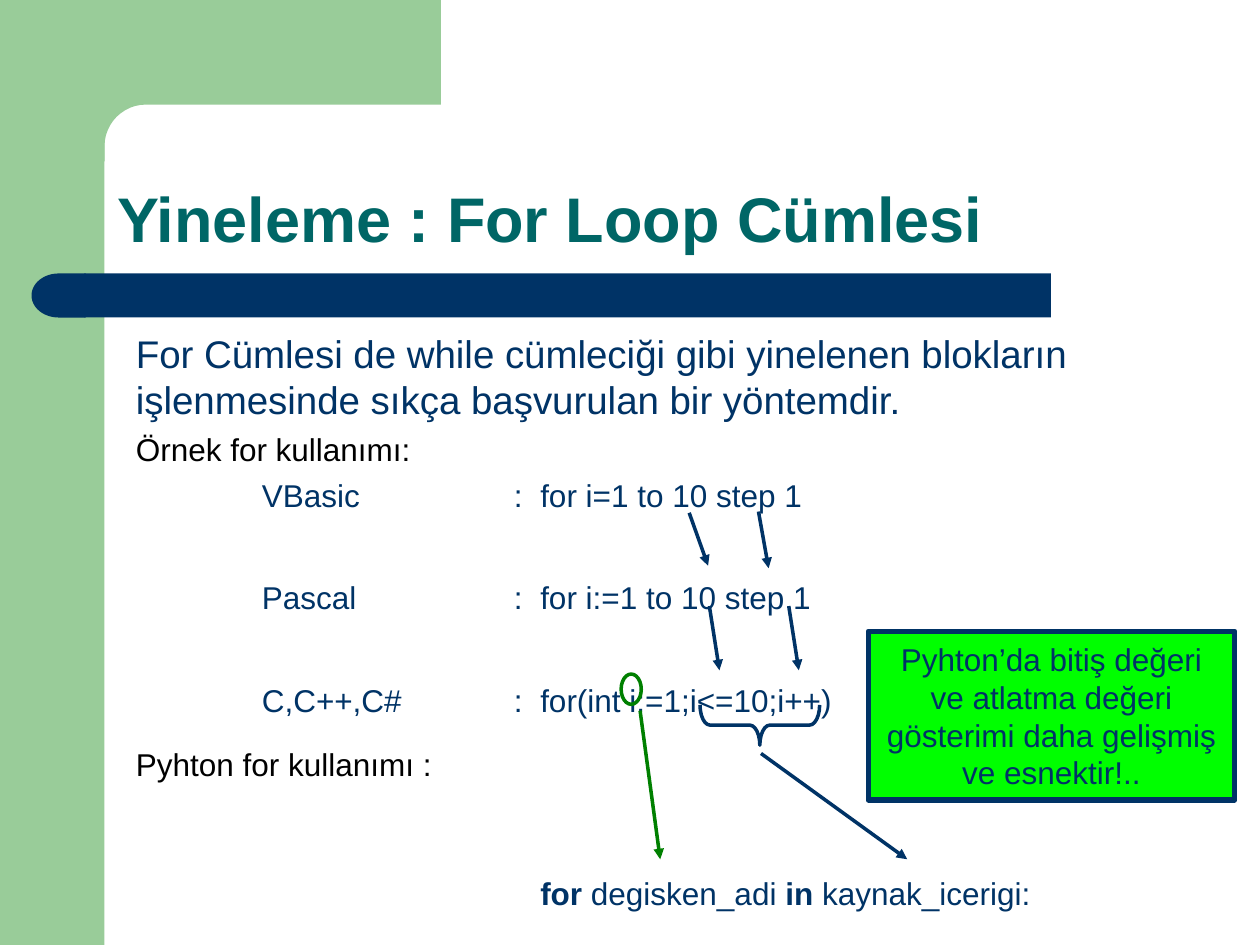
"""Build the slide that explains the for loop in several languages."""
from dataclasses import dataclass
from math import cos, pi, sin

from lxml import etree
from pptx import Presentation
from pptx.dml.color import RGBColor
from pptx.enum.shapes import MSO_CONNECTOR, MSO_SHAPE
from pptx.enum.text import MSO_ANCHOR, MSO_AUTO_SIZE, PP_ALIGN
from pptx.oxml.ns import qn
from pptx.util import Inches, Pt

COLUMNS, ROWS = 10, 7.5
WIDTH, HEIGHT = Inches(10), Inches(7.5)
TITLE_ONLY = 5
RECTANGLE, OVAL = MSO_SHAPE.RECTANGLE, MSO_SHAPE.OVAL
BRACE, ROUND_END = MSO_SHAPE.RIGHT_BRACE, MSO_SHAPE.FLOWCHART_DELAY
STRAIGHT = MSO_CONNECTOR.STRAIGHT
LEFT, CENTER = PP_ALIGN.LEFT, PP_ALIGN.CENTER
TOP, MIDDLE, BOTTOM = MSO_ANCHOR.TOP, MSO_ANCHOR.MIDDLE, MSO_ANCHOR.BOTTOM
NO_FIT = MSO_AUTO_SIZE.NONE
FONT = "Arial"
NAVY, TEAL, SAGE = "003366", "006666", "99CC99"
GREEN, LIME, BLACK = "008000", "00FF00", "000000"
CODE_STOPS = (1, 3, 3.21)


@dataclass
class Area:
    left: float
    top: float
    width: float
    height: float

    def box(self) -> tuple:
        return x(self.left), y(self.top), x(self.width), y(self.height)


@dataclass
class Outline:
    kind: int
    area: Area
    fill: str = ""
    line: str = ""
    weight: float = 2
    rotation: float = 0


@dataclass
class Arrow:
    start: tuple
    end: tuple
    color: str = NAVY


@dataclass
class Line:
    wording: tuple
    color: str = NAVY
    size: int = 18
    spacing: float = 1
    before: float = 4.5
    indent: float = 0


ARROWS = (
    Arrow((5.08, 5.64), (5.24, 6.82), GREEN),
    Arrow((6.04, 5.98), (7.2, 6.82)),
    Arrow((5.63, 4.81), (5.71, 5.32)),
    Arrow((6.26, 4.81), (6.34, 5.32)),
    Arrow((5.47, 4.07), (5.62, 4.49)),
    Arrow((6.02, 4.06), (6.1, 4.51)),
)
BODY = (
    Line(("For Cümlesi de while cümleciği gibi yinelenen blokların "
          "işlenmesinde sıkça başvurulan bir yöntemdir.",), size=22),
    Line(("Örnek for kullanımı:",), BLACK),
    Line(("\tVBasic\t:\tfor i=1 to 10 step 1",)),
    Line(("\tPascal\t:\tfor i:=1 to 10 step 1",), spacing=2.5),
    Line(("\tC,C++,C#\t:\tfor(int i:=1;i<=10;i++)",), spacing=2.5),
    Line(("Pyhton for kullanımı :",), BLACK, spacing=1.5),
    Line(("", "for", " degisken_adi ", "in", " kaynak_icerigi:"),
         spacing=1.5, before=41, indent=CODE_STOPS[-1]),
)


def x(columns: float) -> int:
    """Turn grid columns into a length."""
    return round(WIDTH * columns / COLUMNS)


def y(rows: float) -> int:
    """Turn grid rows into a length."""
    return round(HEIGHT * rows / ROWS)


def rgb(color: str) -> RGBColor:
    """Turn a hex string into a colour."""
    return RGBColor.from_string(color)


def style_font(font, size: float, color: str, bold: bool = False) -> None:
    """Give a font its name, size, colour and weight."""
    font.name, font.size, font.bold = FONT, Pt(size), bold
    font.color.rgb = rgb(color)


def paint(shape, fill: str = "", line: str = "", weight: float = 2) -> None:
    """Set fill and line of a shape and drop its shadow."""
    shape.shadow.inherit = False
    if fill:
        shape.fill.solid()
        shape.fill.fore_color.rgb = rgb(fill)
    else:
        shape.fill.background()
    if line:
        shape.line.color.rgb = rgb(line)
        shape.line.width = Pt(weight)
    else:
        shape.line.fill.background()


def draw_outline(slide, outline: Outline):
    """Draw one preset shape."""
    shape = slide.shapes.add_shape(outline.kind, *outline.area.box())
    paint(shape, outline.fill, outline.line, outline.weight)
    shape.rotation = outline.rotation
    return shape


def draw_corner(slide) -> None:
    """Draw the top band with its rounded inner corner."""
    inner, radius, steps = 0.83, 0.33, 12
    center = inner + radius
    angles = [pi / 2 * step / steps for step in range(steps + 1)]
    curve = [(x(center - radius * sin(a)), y(center - radius * cos(a)))
             for a in angles]
    builder = slide.shapes.build_freeform(x(0.5), y(0))
    builder.add_line_segments(
        [(x(3.5), y(0)), (x(3.5), y(inner)), *curve,
         (x(inner), y(1.28)), (x(0.5), y(1.28))], close=True)
    paint(builder.convert_to_shape(), SAGE)


def draw_arrow(slide, arrow: Arrow) -> None:
    """Draw a straight line with a triangle at its end."""
    (x1, y1), (x2, y2) = arrow.start, arrow.end
    connector = slide.shapes.add_connector(STRAIGHT, x(x1), y(y1), x(x2), y(y2))
    connector.line.color.rgb = rgb(arrow.color)
    connector.line.width = Pt(2)
    properties = connector._element.spPr
    etree.SubElement(properties.find(qn("a:ln")), qn("a:tailEnd"), type="triangle")
    etree.SubElement(properties, qn("a:effectLst"))


def write_line(paragraph, line: Line) -> None:
    """Write a paragraph whose every second piece is bold."""
    for index, wording in enumerate(line.wording):
        if wording:
            run = paragraph.add_run()
            run.text = wording
            style_font(run.font, line.size, line.color, index % 2 == 1)
    paragraph.line_spacing = line.spacing
    paragraph.space_before = Pt(line.before)
    properties = paragraph._p.get_or_add_pPr()
    properties.set("marL", str(x(line.indent)))
    stops = etree.SubElement(properties, qn("a:tabLst"))
    for stop in CODE_STOPS:
        etree.SubElement(stops, qn("a:tab"), pos=str(x(stop)), algn="l")


def write_title(slide) -> None:
    """Place and format the title."""
    title = slide.shapes.title
    title.left, title.top, title.width, title.height = Area(
        0.83, 0.83, 8.67, 1.25).box()
    frame = title.text_frame
    frame.text = "Yineleme : For Loop Cümlesi"
    frame.auto_size, frame.vertical_anchor = NO_FIT, BOTTOM
    heading = frame.paragraphs[0]
    heading.alignment, heading.line_spacing = LEFT, 0.9
    style_font(heading.runs[0].font, 36, TEAL, True)


def write_body(slide) -> None:
    """Write the explanation and the code lines."""
    frame = slide.shapes.add_textbox(*Area(0.98, 2.57, 8.66, 4.72).box()).text_frame
    frame.word_wrap, frame.vertical_anchor = True, TOP
    for index, line in enumerate(BODY):
        write_line(frame.add_paragraph() if index else frame.paragraphs[0], line)


def write_callout(slide) -> None:
    """Draw the bright box with the remark."""
    callout = draw_outline(
        slide, Outline(RECTANGLE, Area(6.89, 5.01, 2.91, 1.34), LIME, NAVY, 3))
    frame = callout.text_frame
    frame.text = ("Pyhton’da bitiş değeri ve atlatma değeri "
                  "gösterimi daha gelişmiş ve esnektir!..")
    frame.word_wrap, frame.vertical_anchor = True, MIDDLE
    frame.paragraphs[0].alignment = CENTER
    style_font(frame.paragraphs[0].runs[0].font, 18, NAVY)


def main() -> None:
    """Build and save the slide."""
    deck = Presentation()
    deck.slide_width, deck.slide_height = WIDTH, HEIGHT
    slide = deck.slides.add_slide(deck.slide_layouts[TITLE_ONLY])
    draw_outline(slide, Outline(RECTANGLE, Area(0, 0, 0.83, ROWS), SAGE))
    draw_corner(slide)
    draw_outline(slide, Outline(RECTANGLE, Area(0.67, 2.17, 7.67, 0.35), NAVY))
    draw_outline(slide, Outline(ROUND_END, Area(0.25, 2.17, 0.43, 0.35), NAVY, rotation=180))
    write_title(slide)
    write_body(slide)
    draw_outline(slide, Outline(BRACE, Area(5.87, 5.28, 0.32, 0.95),
                                line=NAVY, rotation=90)).adjustments[0] = 0.25
    for arrow in ARROWS:
        draw_arrow(slide, arrow)
    write_callout(slide)
    draw_outline(slide, Outline(OVAL, Area(4.93, 5.35, 0.16, 0.24), line=GREEN))
    deck.save("out.pptx")


if __name__ == "__main__":
    main()
